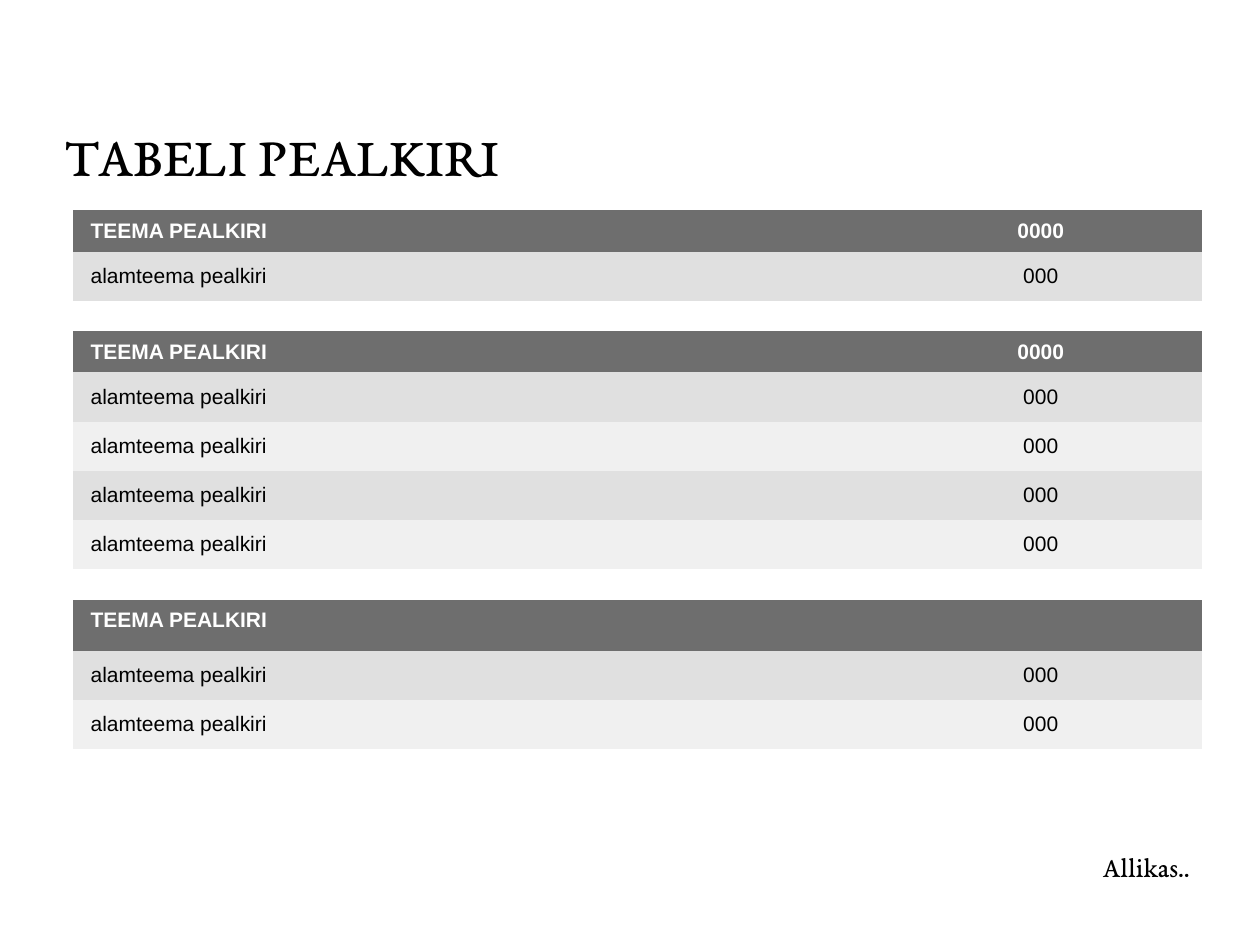
from pptx import Presentation
from pptx.dml.color import RGBColor
from pptx.enum.text import MSO_ANCHOR, PP_ALIGN
from pptx.oxml.ns import qn
from pptx.util import Inches, Pt

BLACK = RGBColor(0x00, 0x00, 0x00)
WHITE = RGBColor(0xFF, 0xFF, 0xFF)
HEADER_GREY = RGBColor(0x6E, 0x6E, 0x6E)
BANDS = (RGBColor(0xE0, 0xE0, 0xE0), RGBColor(0xF0, 0xF0, 0xF0))
SERIF = "EB Garamond"
SANS = "Arial"
PLAIN_STYLE = "{2D5ABB26-0587-4C30-8999-92F81FD0307C}"  # no style, no grid

COLUMN_WIDTHS = (6.4, 2.56)
HEADER_HEIGHT = 0.3  # grows to fit its text
ROW_HEIGHT = 0.39
TABLE_LEFT = 0.58
FRAME_SIZE = 3.28

HEADER = "TEEMA PEALKIRI"
SUBTOPIC = ("alamteema pealkiri", "000")

# Top, header value, number of subtopics
TOPICS = ((1.67, "0000", 1), (2.63, "0000", 4), (4.76, "", 2))


def format_text(paragraph, font_name, size, color, bold=False, align=PP_ALIGN.LEFT):
    paragraph.alignment = align
    for run in paragraph.runs:
        run.font.name = font_name
        run.font.size = Pt(size)
        run.font.color.rgb = color
        run.font.bold = bold


def place_title(slide, left, top, width, height):
    title = slide.shapes.title
    title.left, title.top = Inches(left), Inches(top)
    title.width, title.height = Inches(width), Inches(height)
    title.text_frame.text = "TABELI PEALKIRI"
    title.text_frame.vertical_anchor = MSO_ANCHOR.BOTTOM
    format_text(title.text_frame.paragraphs[0], SERIF, 32, BLACK)


def fill_cell(cell, text, fill, color, is_header, align):
    cell.fill.solid()
    cell.fill.fore_color.rgb = fill
    if not text:
        return
    cell.margin_left = cell.margin_right = Inches(0.14)
    cell.margin_top = cell.margin_bottom = Inches(0.07)
    cell.vertical_anchor = MSO_ANCHOR.TOP if is_header else MSO_ANCHOR.MIDDLE
    cell.text_frame.text = text
    format_text(cell.text_frame.paragraphs[0], SANS, 12, color, is_header, align)


def add_topic_table(slide, left, top, size, header_value, subtopic_count):
    rows = [(HEADER, header_value)] + [SUBTOPIC] * subtopic_count
    frame = slide.shapes.add_table(
        len(rows), len(COLUMN_WIDTHS),
        Inches(left), Inches(top), Inches(size), Inches(size),
    )
    table = frame.table
    table.horz_banding = False
    next(frame._element.iter(qn("a:tableStyleId"))).text = PLAIN_STYLE

    for column, width in zip(table.columns, COLUMN_WIDTHS):
        column.width = Inches(width)
    for index, values in enumerate(rows):
        is_header = index == 0
        table.rows[index].height = Inches(HEADER_HEIGHT if is_header else ROW_HEIGHT)
        fill = HEADER_GREY if is_header else BANDS[(index - 1) % 2]
        color = WHITE if is_header else BLACK
        for cell, text, align in zip(
            table.rows[index].cells, values, (PP_ALIGN.LEFT, PP_ALIGN.CENTER)
        ):
            fill_cell(cell, text, fill, color, is_header, align)

    # Column and row changes resize the frame, so its size is set last
    frame.width = frame.height = Inches(size)


def add_source(slide, left, top, width, height):
    box = slide.shapes.add_textbox(
        Inches(left), Inches(top), Inches(width), Inches(height)
    )
    box.text_frame.word_wrap = True
    box.text_frame.vertical_anchor = MSO_ANCHOR.BOTTOM
    box.text_frame.text = "Allikas.."
    paragraph = box.text_frame.paragraphs[0]
    paragraph.line_spacing = 1.2
    format_text(paragraph, SERIF, 16, BLACK, align=PP_ALIGN.RIGHT)


def main():
    presentation = Presentation()
    presentation.slide_width, presentation.slide_height = Inches(10), Inches(7.5)
    slide = presentation.slides.add_slide(presentation.slide_layouts[5])

    place_title(slide, 0.41, 0.3, 9.15, 1.24)
    for top, header_value, subtopic_count in TOPICS:
        add_topic_table(
            slide, TABLE_LEFT, top, FRAME_SIZE, header_value, subtopic_count
        )
    add_source(slide, 3.01, 6.44, 6.53, 0.62)

    presentation.save("out.pptx")


if __name__ == "__main__":
    main()
